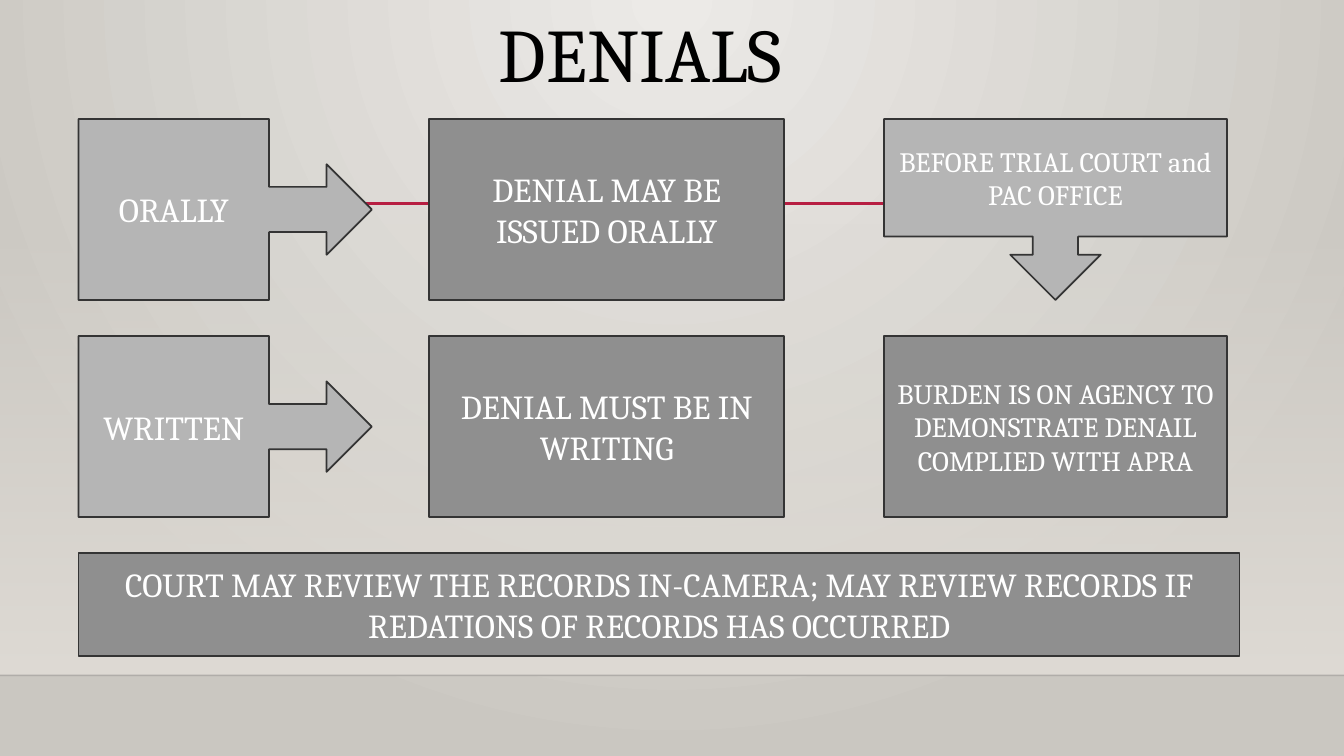
from dataclasses import dataclass

from lxml.etree import SubElement
from pptx import Presentation
from pptx.dml.color import RGBColor
from pptx.enum.shapes import MSO_CONNECTOR, MSO_SHAPE
from pptx.enum.text import MSO_ANCHOR, MSO_AUTO_SIZE, PP_ALIGN
from pptx.oxml.ns import qn
from pptx.shapes.connector import Connector
from pptx.slide import Slide
from pptx.util import Cm, Pt

BACKGROUND_LIGHT = RGBColor(0xEC, 0xEA, 0xE7)
BACKGROUND_DARK = RGBColor(0xCA, 0xC7, 0xC1)
WALL = RGBColor(0xDF, 0xDB, 0xD5)
NEAR_BLACK = RGBColor(0x00, 0x00, 0x01)
BLACK = RGBColor(0x00, 0x00, 0x00)
WHITE = RGBColor(0xFF, 0xFF, 0xFF)
CRIMSON = RGBColor(0xB7, 0x1E, 0x42)
LIGHT_GRAY = RGBColor(0xB5, 0xB5, 0xB5)
MID_GRAY = RGBColor(0x8F, 0x8F, 0x8F)
OUTLINE = RGBColor(0x34, 0x34, 0x34)

FONT = "Cambria"
SLIDE_WIDTH, SLIDE_HEIGHT = 33.87, 19.05
FLOOR = 17.02
WALL_TOP = 5.61
COLUMNS = ((1.98, 7.39), (10.82, 8.94), (22.28, 8.64))
ROW_TOP, ROW_PITCH, ROW_HEIGHT = 3.0, 5.47, 4.56


@dataclass(frozen=True)
class Box:
    kind: MSO_SHAPE
    left: float
    top: float
    width: float
    height: float
    lines: tuple[str, ...]
    size: int = 24


def grid_box(kind: MSO_SHAPE, column: int, row: int, *lines: str, size: int = 24) -> Box:
    left, width = COLUMNS[column]
    return Box(kind, left, ROW_TOP + row * ROW_PITCH, width, ROW_HEIGHT, lines, size)


BOXES = (
    grid_box(MSO_SHAPE.RIGHT_ARROW_CALLOUT, 0, 0, "ORALLY"),
    grid_box(MSO_SHAPE.RIGHT_ARROW_CALLOUT, 0, 1, "WRITTEN"),
    grid_box(MSO_SHAPE.RECTANGLE, 1, 0, "DENIAL MAY BE ISSUED ORALLY"),
    grid_box(MSO_SHAPE.RECTANGLE, 1, 1, "DENIAL MUST BE IN WRITING"),
    grid_box(MSO_SHAPE.DOWN_ARROW_CALLOUT, 2, 0,
             "BEFORE TRIAL COURT and", "PAC OFFICE", size=20),
    grid_box(MSO_SHAPE.RECTANGLE, 2, 1,
             "BURDEN IS ON AGENCY TO DEMONSTRATE DENAIL COMPLIED WITH APRA", size=20),
    Box(MSO_SHAPE.RECTANGLE, 1.98, 13.94, 29.26, 2.59,
        ("COURT MAY REVIEW THE RECORDS IN-CAMERA; MAY REVIEW RECORDS IF "
         "REDATIONS OF RECORDS HAS OCCURRED",)),
)


def paint_background(slide: Slide) -> None:
    """Fill the slide with a radial gradient centred on its top edge."""
    fill = slide.background.fill
    fill.gradient()
    for stop, color in zip(fill.gradient_stops, (BACKGROUND_LIGHT, BACKGROUND_DARK)):
        stop.color.rgb = color
    gradient = next(slide.background._cSld.iter(qn("a:gradFill")))
    gradient.remove(gradient.find(qn("a:lin")))
    circle = SubElement(gradient, qn("a:path"), path="circle")
    SubElement(circle, qn("a:fillToRect"), l="43000", t="0", r="43000", b="100000")


def add_wall(slide: Slide) -> None:
    """Add the panel that fades in from transparent towards the floor line."""
    wall = slide.shapes.add_shape(MSO_SHAPE.RECTANGLE, 0, Cm(WALL_TOP),
                                  Cm(SLIDE_WIDTH), Cm(FLOOR - WALL_TOP))
    wall.shadow.inherit = False
    wall.line.fill.background()
    wall.fill.gradient()
    wall.fill.gradient_angle = 270
    for stop in wall.fill.gradient_stops:
        stop.color.rgb = WALL
    first_color = next(wall._element.spPr.iter(qn("a:srgbClr")))
    SubElement(first_color, qn("a:alpha"), val="0")


def add_rule(slide: Slide, start: float, end: float, y: float,
             color: RGBColor, weight: float) -> Connector:
    rule = slide.shapes.add_connector(MSO_CONNECTOR.STRAIGHT,
                                      Cm(start), Cm(y), Cm(end), Cm(y))
    rule.line.color.rgb = color
    rule.line.width = Pt(weight)
    SubElement(rule._element.spPr, qn("a:effectLst"))
    return rule


def add_title(slide: Slide) -> None:
    title = slide.shapes.title
    title.left, title.top, title.width, title.height = Cm(12.32), Cm(0.3), Cm(9.22), Cm(3.68)
    frame = title.text_frame
    frame.auto_size = MSO_AUTO_SIZE.NONE
    frame.vertical_anchor = MSO_ANCHOR.TOP
    paragraph = frame.paragraphs[0]
    paragraph.alignment = PP_ALIGN.LEFT
    paragraph.line_spacing = 0.9
    run = paragraph.add_run()
    run.text = "DENIALS"
    run.font.name = FONT
    run.font.size = Pt(54)
    run.font.color.rgb = BLACK


def add_box(slide: Slide, box: Box) -> None:
    shape = slide.shapes.add_shape(box.kind, Cm(box.left), Cm(box.top),
                                   Cm(box.width), Cm(box.height))
    shape.shadow.inherit = False
    shape.fill.solid()
    shape.fill.fore_color.rgb = MID_GRAY if box.kind == MSO_SHAPE.RECTANGLE else LIGHT_GRAY
    shape.line.color.rgb = OUTLINE
    shape.line.width = Pt(1.25)
    frame = shape.text_frame
    frame.word_wrap = True
    frame.vertical_anchor = MSO_ANCHOR.MIDDLE
    for index, line in enumerate(box.lines):
        paragraph = frame.add_paragraph() if index else frame.paragraphs[0]
        paragraph.alignment = PP_ALIGN.CENTER
        run = paragraph.add_run()
        run.text = line
        run.font.name = FONT
        run.font.size = Pt(box.size)
        run.font.color.rgb = WHITE


def main() -> None:
    presentation = Presentation()
    presentation.slide_width = Cm(SLIDE_WIDTH)
    presentation.slide_height = Cm(SLIDE_HEIGHT)
    slide = presentation.slides.add_slide(presentation.slide_layouts.get_by_name("Title Only"))
    paint_background(slide)
    add_wall(slide)
    floor_line = add_rule(slide, 0, SLIDE_WIDTH, FLOOR, NEAR_BLACK, 1)
    floor_color = next(floor_line._element.spPr.iter(qn("a:srgbClr")))
    SubElement(floor_color, qn("a:alpha"), val="20000")
    add_rule(slide, 4.04, 30.7, 5.13, CRIMSON, 2.5)
    add_title(slide)
    for box in BOXES:
        add_box(slide, box)
    presentation.save("out.pptx")


if __name__ == "__main__":
    main()
